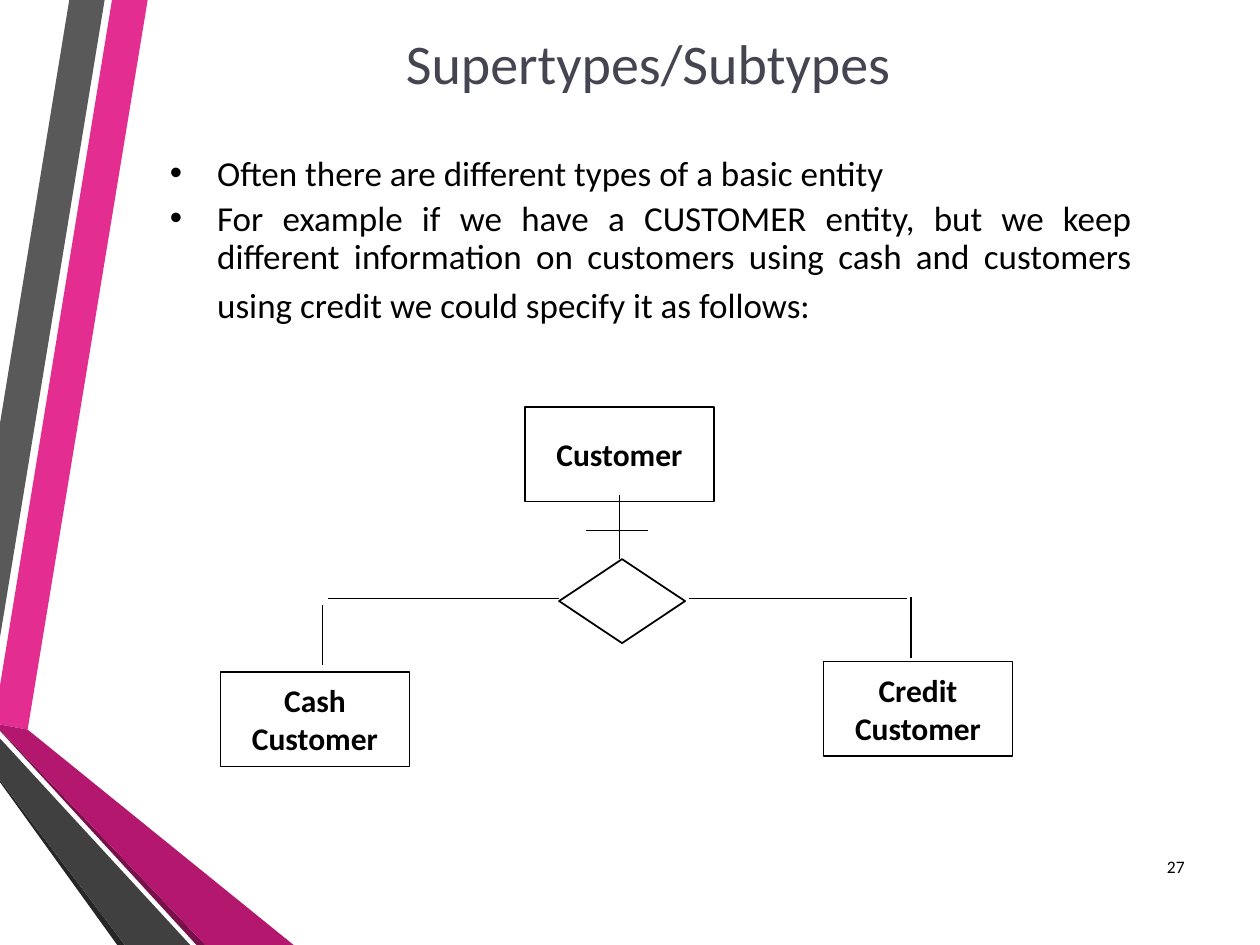
from lxml import etree
from pptx import Presentation
from pptx.dml.color import RGBColor
from pptx.enum.shapes import MSO_CONNECTOR, MSO_SHAPE
from pptx.enum.text import MSO_ANCHOR, PP_ALIGN
from pptx.oxml.ns import qn
from pptx.util import Pt

LEFT, CENTER, RIGHT, JUSTIFY = PP_ALIGN.LEFT, PP_ALIGN.CENTER, PP_ALIGN.RIGHT, PP_ALIGN.JUSTIFY
TOP, MIDDLE = MSO_ANCHOR.TOP, MSO_ANCHOR.MIDDLE
RECT, DIAMOND, STRAIGHT = MSO_SHAPE.RECTANGLE, MSO_SHAPE.DIAMOND, MSO_CONNECTOR.STRAIGHT

THEME = {
    "font": "Calibri",
    "ink": "000000", "paper": "FFFFFF", "title": "454551",
    "pink": "E32D91", "magenta": "B4186E", "wine": "781049",
    "grey": "595959", "dark": "404040", "coal": "262626",
    "title_size": 32, "body_size": 20, "tail_size": 28, "box_size": 18, "number_size": 10,
}

# Content: lengths in points
TITLE = "Supertypes/Subtypes"
BULLETS = [
    "Often there are different types of a basic entity",
    "For example if we have a CUSTOMER entity, but we keep different information on "
    "customers using cash and customers using credit we could specify it as follows:",
]
PAGE = "27"

RIBBONS = [  # colour, outline points
    ("pink", [(0, 391.7), (0, 414), (15.8, 416.9), (84.4, 0), (64, 0)]),
    ("grey", [(59.8, 0), (39.6, 0), (0, 242), (0, 364.3)]),
    ("coal", [(0, 445.7), (0, 447), (67, 540), (71.3, 540)]),
    ("wine", [(0, 416.9), (0, 417.6), (112.3, 540), (117.4, 540)]),
    ("magenta", [(0, 416.9), (117.4, 540), (167.8, 540), (15.8, 416.9), (0, 414)]),
    ("dark", [(0, 445.7), (71.3, 540), (108.7, 540), (0, 422)]),
]

BOX_W, BOX_H = 108, 54
ENTITIES = [  # lines, left, top
    (["Customer"], 300, 232.6),
    (["Cash", "Customer"], 126, 384),
    (["Credit", "Customer"], 470.6, 378),
]
SUBTYPE_MARK = (319.5, 319.5, 72, 48)
LINKS = [  # x1, y1, x2, y2
    (354, 319.7, 354, 283),       # supertype stem
    (319.7, 342, 187.2, 342),     # left branch
    (393.8, 342, 518.4, 342),     # right branch
    (520.6, 341.3, 520.6, 375.8), # drop to credit
    (184.3, 345.6, 184.3, 380.2), # drop to cash
    (334.8, 303.1, 370.1, 303.1), # cardinality bar
]


def color(key):
    return RGBColor.from_string(THEME[key])


def add_run(p, text, size, ink="ink", bold=False):
    r = p.add_run()
    r.text = text
    formats = {"name": THEME["font"], "size": Pt(THEME[size]), "bold": bold}
    for name, value in formats.items():
        setattr(r.font, name, value)
    r.font.color.rgb = color(ink)


def set_frame(s, anchor, wrap=True):
    tf = s.text_frame
    formats = {"word_wrap": wrap, "vertical_anchor": anchor,
               "margin_left": Pt(7.2), "margin_right": Pt(7.2),
               "margin_top": Pt(3.6), "margin_bottom": Pt(3.6)}
    for name, value in formats.items():
        setattr(tf, name, value)
    return tf


def add_text(slide, box, anchor, align, spacing=1.0):
    tf = set_frame(slide.shapes.add_textbox(*map(Pt, box)), anchor)
    p = tf.paragraphs[0]
    p.alignment, p.line_spacing = align, spacing
    return tf


def add_ribbon(slide, fill, points):
    start, *rest = [(Pt(x), Pt(y)) for x, y in points]
    builder = slide.shapes.build_freeform(*start)
    builder.add_line_segments(rest, close=True)
    s = builder.convert_to_shape()
    s.shadow.inherit = False
    s.fill.solid()
    s.fill.fore_color.rgb = color(fill)
    s.line.fill.background()


def add_outlined(slide, kind, box):
    s = slide.shapes.add_shape(kind, *map(Pt, box))
    s.shadow.inherit = False
    s.fill.solid()
    s.fill.fore_color.rgb = color("paper")
    s.line.color.rgb = color("ink")
    s.line.width = Pt(1)
    return s


def add_entity(slide, lines, left, top):
    s = add_outlined(slide, RECT, (left, top, BOX_W, BOX_H))
    tf = set_frame(s, MIDDLE, wrap=False)
    for i, line in enumerate(lines):
        p = tf.add_paragraph() if i else tf.paragraphs[0]
        p.alignment = CENTER
        add_run(p, line, "box_size", bold=True)


def add_link(slide, ends):
    s = slide.shapes.add_connector(STRAIGHT, *map(Pt, ends))
    s.line.color.rgb = color("ink")
    s.line.width = Pt(1)
    etree.SubElement(s._element.spPr, qn("a:effectLst"))


def add_bullets(slide, items):
    tf = add_text(slide, (90, 85.7, 563.8, 145.4), TOP, JUSTIFY, 0.9)
    for i, item in enumerate(items):
        p = tf.add_paragraph() if i else tf.paragraphs[0]
        pPr = p._p.get_or_add_pPr()
        pPr.set("marL", str(Pt(27)))
        pPr.set("indent", str(-Pt(27)))
        etree.SubElement(pPr, qn("a:buFont"), typeface="Arial")
        etree.SubElement(pPr, qn("a:buChar"), char="•")
        p.alignment, p.line_spacing = JUSTIFY, 0.9
        if i:
            p.space_before = Pt(4)
        add_run(p, item, "body_size")
    # The larger closing space sets the height of the last line
    add_run(p, " ", "tail_size")


def main():
    prs = Presentation()
    prs.slide_width, prs.slide_height = Pt(720), Pt(540)
    slide = prs.slides.add_slide(prs.slide_layouts[6])

    # Side ribbons
    for fill, points in RIBBONS:
        add_ribbon(slide, fill, points)

    # Page number, title and bullets
    tf = add_text(slide, (650.2, 481, 33.8, 28.8), MIDDLE, RIGHT)
    add_run(tf.paragraphs[0], PAGE, "number_size")
    tf = add_text(slide, (88.6, 18, 563.8, 40.3), MIDDLE, CENTER, 0.9)
    add_run(tf.paragraphs[0], TITLE, "title_size", "title")
    add_bullets(slide, BULLETS)

    # Supertype diagram
    for entity in ENTITIES:
        add_entity(slide, *entity)
    add_outlined(slide, DIAMOND, SUBTYPE_MARK)
    for ends in LINKS:
        add_link(slide, ends)

    prs.save("out.pptx")


if __name__ == "__main__":
    main()
